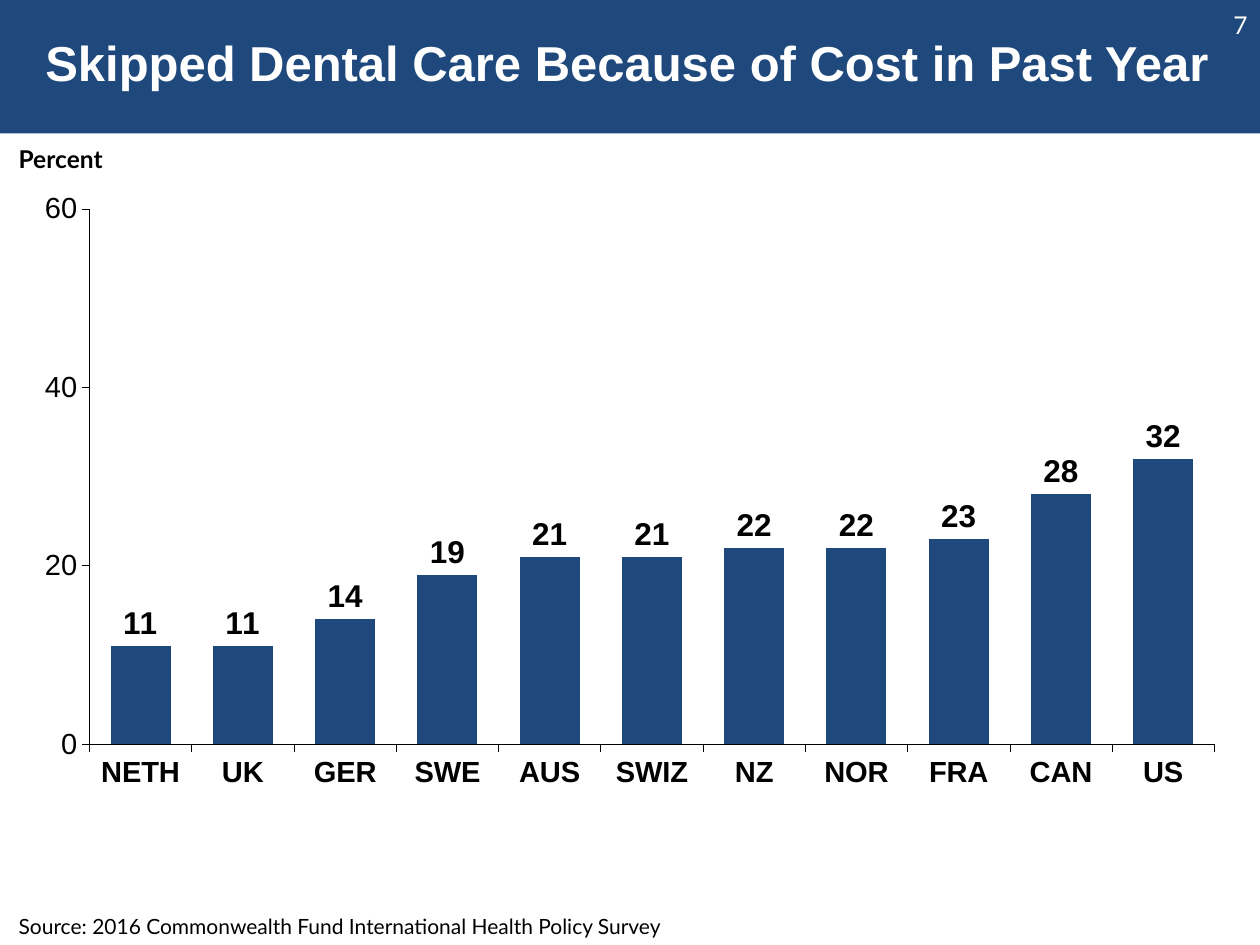
from dataclasses import dataclass

import pptx
import pptx.chart.data
import pptx.dml.color
import pptx.enum.chart
import pptx.enum.shapes
import pptx.enum.text
import pptx.oxml
import pptx.oxml.ns
import pptx.util
from pptx.util import Inches

Align = pptx.enum.text.PP_ALIGN
Anchor = pptx.enum.text.MSO_ANCHOR


@dataclass(frozen=True)
class Theme:
    navy = pptx.dml.color.RGBColor.from_string("1F497D")
    white = pptx.dml.color.RGBColor.from_string("FFFFFF")
    black = pptx.dml.color.RGBColor.from_string("000000")
    heading_font = "Arial"
    body_font = "Lato"
    title_size = 28
    value_size = 18
    axis_size = 16.6
    label_size = 14
    source_size = 12
    axis_line = 0.3


THEME = Theme()


@dataclass(frozen=True)
class Label:
    text: str
    box: tuple[float, float, float, float]
    size: float
    color: pptx.dml.color.RGBColor = THEME.black
    font: str = THEME.body_font
    bold: bool = False
    align: Align = Align.LEFT
    anchor: Anchor = Anchor.TOP
    line_spacing: float = 1.0


LABELS = [
    Label("7", (7.67, 0, 2.33, 0.4), THEME.label_size, THEME.white,
          align=Align.RIGHT, anchor=Anchor.MIDDLE),
    Label("Skipped Dental Care Because of Cost in Past Year", (0.05, 0.15, 9.85, 0.74),
          THEME.title_size, THEME.white, THEME.heading_font, True,
          Align.CENTER, Anchor.MIDDLE, 0.9),
    Label("Source: 2016 Commonwealth Fund International Health Policy Survey",
          (0.05, 7.2, 8.13, 0.3), THEME.source_size),
    Label("Percent", (0.05, 1.09, 1.13, 0.34), THEME.label_size, bold=True),
]

SKIPPED_CARE = {
    "NETH": 11, "UK": 11, "GER": 14, "SWE": 19, "AUS": 21, "SWIZ": 21,
    "NZ": 22, "NOR": 22, "FRA": 23, "CAN": 28, "US": 32,
}
PLOT_AREA = {"x": 0.05, "y": 0.05, "w": 0.95, "h": 0.82}


def set_font(font, size: float, color, name: str, bold: bool = False) -> None:
    font.size = pptx.util.Pt(size)
    font.color.rgb = color
    font.name = name
    font.bold = bold


def add_banner(slide) -> None:
    s = slide.shapes.add_shape(pptx.enum.shapes.MSO_SHAPE.RECTANGLE,
                               0, 0, Inches(10), Inches(1.06))
    s.shadow.inherit = False
    s.fill.solid()
    s.fill.fore_color.rgb = THEME.navy
    s.line.fill.background()


def add_label(slide, label: Label) -> None:
    tf = slide.shapes.add_textbox(*map(Inches, label.box)).text_frame
    tf.word_wrap = True
    tf.vertical_anchor = label.anchor
    p = tf.paragraphs[0]
    p.text = label.text
    p.alignment = label.align
    p.line_spacing = label.line_spacing
    set_font(p.font, label.size, label.color, label.font, label.bold)


def style_axis(axis, bold: bool) -> None:
    axis.has_major_gridlines = False
    axis.major_tick_mark = pptx.enum.chart.XL_TICK_MARK.OUTSIDE
    axis.minor_tick_mark = pptx.enum.chart.XL_TICK_MARK.NONE
    axis.format.line.color.rgb = THEME.black
    axis.format.line.width = pptx.util.Pt(THEME.axis_line)
    set_font(axis.tick_labels.font, THEME.axis_size, THEME.black, THEME.heading_font, bold)


def place_plot_area(chart) -> None:
    """Fix the inner plot area as fractions of the chart frame."""
    plot_area = chart.plots[0]._element.getparent()
    for old in plot_area.findall(pptx.oxml.ns.qn("c:layout")):
        plot_area.remove(old)
    sizes = "".join(f'<c:{key} val="{value}"/>' for key, value in PLOT_AREA.items())
    plot_area.insert(0, pptx.oxml.parse_xml(
        f'<c:layout {pptx.oxml.ns.nsdecls("c")}><c:manualLayout>'
        '<c:layoutTarget val="inner"/><c:xMode val="edge"/><c:yMode val="edge"/>'
        f'{sizes}</c:manualLayout></c:layout>'))


def add_skipped_care_chart(slide) -> None:
    data = pptx.chart.data.CategoryChartData(number_format="0")
    data.categories = list(SKIPPED_CARE)
    data.add_series("Series 1", list(SKIPPED_CARE.values()))
    chart = slide.shapes.add_chart(
        pptx.enum.chart.XL_CHART_TYPE.COLUMN_CLUSTERED,
        Inches(0.24), Inches(1.4), Inches(9.4), Inches(5.18), data).chart
    chart.has_legend = False
    chart.has_title = False
    set_font(chart.font, THEME.axis_size, THEME.black, THEME.heading_font)

    style_axis(chart.category_axis, bold=True)
    axis = chart.value_axis
    style_axis(axis, bold=False)
    axis.minimum_scale, axis.maximum_scale, axis.major_unit = 0, 60, 20
    axis.tick_labels.number_format = "0"
    axis.tick_labels.number_format_is_linked = False

    plot = chart.plots[0]
    plot.vary_by_categories = False
    plot.gap_width = 70
    plot.overlap = -10
    series = plot.series[0]
    series.format.fill.solid()
    series.format.fill.fore_color.rgb = THEME.navy

    labels = series.data_labels
    labels.show_value = True
    labels.position = pptx.enum.chart.XL_LABEL_POSITION.OUTSIDE_END
    labels.number_format = "0"
    labels.number_format_is_linked = False
    set_font(labels.font, THEME.value_size, THEME.black, THEME.heading_font, True)
    place_plot_area(chart)


def main() -> None:
    prs = pptx.Presentation()
    prs.slide_width, prs.slide_height = Inches(10), Inches(7.5)
    slide = prs.slides.add_slide(prs.slide_layouts[6])
    add_banner(slide)
    add_skipped_care_chart(slide)
    for label in LABELS:
        add_label(slide, label)
    prs.save("out.pptx")


if __name__ == "__main__":
    main()
